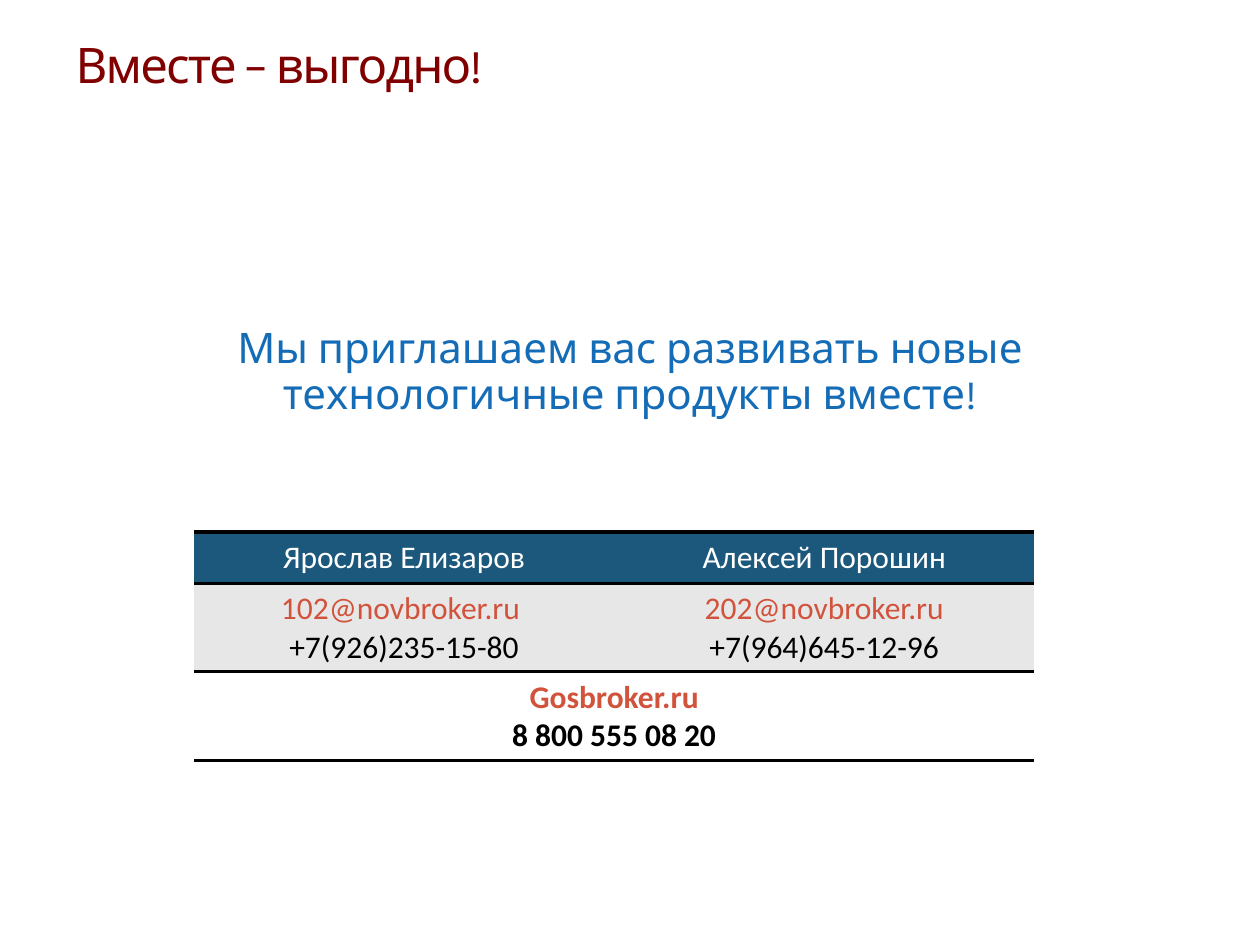
from pptx import Presentation
from pptx.dml.color import RGBColor
from pptx.enum.text import MSO_ANCHOR, PP_ALIGN
from pptx.oxml import parse_xml
from pptx.oxml.ns import nsdecls, qn
from pptx.util import Inches, Pt

BLACK, WHITE, RED = "000000", "FFFFFF", "D2533C"
PLAIN = "{2D5ABB26-0587-4C30-8999-92F81FD0307C}"


def paint(color):
    return RGBColor.from_string(color)


class Deck:
    head, body = "Karla", "Calibri"

    def __init__(self):
        self.prs = Presentation()
        self.prs.slide_width, self.prs.slide_height = Inches(10), Inches(7.5)
        self.slide = self.prs.slides.add_slide(self.prs.slide_layouts[5])

    def area(self, x, y, w, h):
        wide, high = self.prs.slide_width, self.prs.slide_height
        return int(x * wide), int(y * high), int(w * wide), int(h * high)

    def fill(self, frame, lines, font, size, align, bold=False):
        frame.word_wrap = True
        frame.vertical_anchor = MSO_ANCHOR.TOP
        self.lines(frame, lines, font, size, align, bold)

    def lines(self, frame, lines, font, size, align, bold=False):
        for i, (text, color) in enumerate(lines):
            para = frame.paragraphs[0] if i == 0 else frame.add_paragraph()
            para.text = text
            para.alignment = align
            para.font.name, para.font.size = font, Pt(size)
            para.font.bold = bold
            para.font.color.rgb = paint(color)

    def title(self, text, color, *box):
        shape = self.slide.shapes.title
        shape.left, shape.top, shape.width, shape.height = self.area(*box)
        self.fill(shape.text_frame, [(text, color)], self.head, 28, PP_ALIGN.LEFT)
        run = shape.text_frame.paragraphs[0].runs[0]
        run._r.get_or_add_rPr().set("spc", "-100")

    def text(self, text, color, *box):
        frame = self.slide.shapes.add_textbox(*self.area(*box)).text_frame
        self.fill(frame, [(text, color)], self.head, 24, PP_ALIGN.CENTER)
        frame.paragraphs[0].line_spacing = 0.9

    def edge(self, cell, sides):
        props = cell._tc.get_or_add_tcPr()
        for i, side in enumerate(sides):
            props.insert(i, parse_xml(
                f'<a:ln{side} {nsdecls("a")} w="25400"><a:solidFill>'
                f'<a:srgbClr val="{BLACK}"/></a:solidFill></a:ln{side}>'))

    def table(self, rows, fills, highs, edges, *box):
        table = self.slide.shapes.add_table(len(rows), 2, *self.area(*box)).table
        table.first_row = table.horz_banding = False
        table._tbl.tblPr.find(qn("a:tableStyleId")).text = PLAIN
        for r, row in enumerate(rows):
            table.rows[r].height = Inches(highs[r])
            alone = len(row) == 1
            if alone:
                table.cell(r, 0).merge(table.cell(r, 1))
            for c in range(2):
                cell = table.cell(r, c)
                cell.fill.solid()
                cell.fill.fore_color.rgb = paint(fills[r])
                self.edge(cell, edges[r])
                if c < len(row):
                    self.lines(cell.text_frame, row[c], self.body, 18,
                               PP_ALIGN.CENTER, alone)


def main():
    deck = Deck()
    deck.title("Вместе – выгодно!", "800000", 0.05, 0.03, 0.72, 0.14)
    deck.text("Мы приглашаем вас развивать новые технологичные продукты вместе!",
              "146CB6", 0.05, 0.34, 0.9, 0.14)
    rows = [
        [[("Ярослав Елизаров", WHITE)], [("Алексей Порошин", WHITE)]],
        [[("102@novbroker.ru ", RED), ("+7(926)235-15-80", BLACK)],
         [("202@novbroker.ru", RED), ("+7(964)645-12-96", BLACK)]],
        [[("Gosbroker.ru", RED), ("8 800 555 08 20", BLACK)]],
    ]
    deck.table(rows, ["1B587C", "E7E7E7", WHITE], [0.41, 0.7, 0.7],
               ["TB", "T", "B"], 0.154, 0.563, 0.667, 0.241)
    deck.prs.save("out.pptx")


if __name__ == "__main__":
    main()
